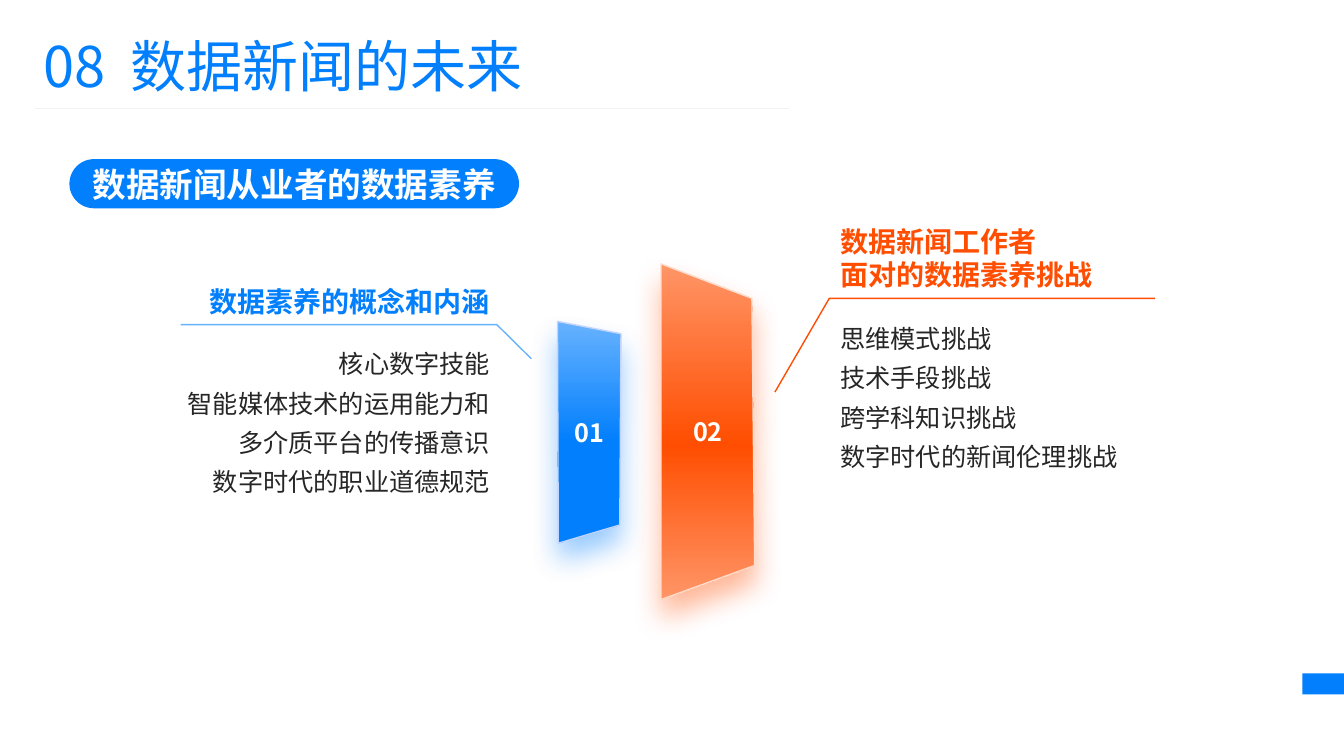
import pptx
import pptx.dml.color
import pptx.enum.shapes
import pptx.enum.text
import pptx.oxml.ns
import pptx.util
from lxml import etree

Cm, Pt = pptx.util.Cm, pptx.util.Pt
ALIGN = pptx.enum.text.PP_ALIGN
ANCHOR = pptx.enum.text.MSO_ANCHOR
SHAPE = pptx.enum.shapes.MSO_SHAPE
qn = pptx.oxml.ns.qn

BLUE, ORANGE, WHITE, INK = "027FFD", "FF4E01", "FFFFFF", "262626"
LIGHT_BLUE, LIGHT_ORANGE = "67B2FE", "FF9567"


def rgb(value):
    return pptx.dml.color.RGBColor.from_string(value)


def sub(parent, tag, **attrs):
    """Append a DrawingML child element."""
    node = etree.SubElement(parent, qn(tag))
    for name, value in attrs.items():
        node.set(name, str(value))
    return node


class Deck:
    font = "Noto Sans CJK SC"

    def __init__(self):
        self.prs = pptx.Presentation()
        self.prs.slide_width, self.prs.slide_height = Cm(33.87), Cm(19.05)
        self.slide = self.prs.slides.add_slide(self.prs.slide_layouts[6])

    def style(self, tf, size, color, bold=False, align=ALIGN.LEFT, spacing=None):
        for p in tf.paragraphs:
            p.alignment = align
            if spacing:
                p.line_spacing = spacing
            for r in p.runs:
                r.font.size, r.font.bold = Pt(size), bold
                r.font.name = self.font
                r.font.color.rgb = rgb(color)
                sub(r.font._element, "a:ea", typeface=self.font)

    def text(self, box, lines, size, color, anchor=ANCHOR.TOP, **style):
        tf = self.slide.shapes.add_textbox(*map(Cm, box)).text_frame
        tf.word_wrap = True
        tf.vertical_anchor = anchor
        tf.margin_left = tf.margin_right = tf.margin_top = tf.margin_bottom = 0
        tf.text = "\n".join(lines)
        self.style(tf, size, color, **style)

    def title(self, box, number, words):
        """Heading whose number is set apart by a widened space."""
        tf = self.slide.shapes.add_textbox(*map(Cm, box)).text_frame
        tf.word_wrap = True
        p = tf.paragraphs[0]
        for part in (number, " ", words):
            p.add_run().text = part
        self.style(tf, 40, BLUE)
        p.runs[1].font._element.set("spc", "900")

    def block(self, kind, box, fill):
        sp = self.slide.shapes.add_shape(kind, *map(Cm, box))
        sp.shadow.inherit = False
        sp.fill.solid()
        sp.fill.fore_color.rgb = rgb(fill)
        sp.line.fill.background()
        return sp

    def pill(self, box, words):
        sp = self.block(SHAPE.ROUNDED_RECTANGLE, box, BLUE)
        sp.adjustments[0] = 0.5
        tf = sp.text_frame
        tf.vertical_anchor = ANCHOR.MIDDLE
        tf.text = words
        self.style(tf, 24, WHITE, bold=True, align=ALIGN.CENTER)

    def outline(self, points, color, closed):
        points = [(Cm(x), Cm(y)) for x, y in points]
        builder = self.slide.shapes.build_freeform(*points[0], scale=1.0)
        builder.add_line_segments(points[1:], close=closed)
        sp = builder.convert_to_shape()
        sp.shadow.inherit = False
        sp.line.color.rgb = rgb(color)
        sp.line.width = Pt(1)
        return sp

    def callout(self, points, color):
        self.outline(points, color, False).fill.background()

    def panel(self, points, label, colors, edge):
        """Numbered panel with a vertical gradient and a glow below it."""
        sp = self.outline(points, edge, True)
        sp.fill.gradient()
        sp.fill.gradient_angle = 270
        stops = sp._element.spPr.find(".//" + qn("a:gsLst"))
        for old in list(stops):
            stops.remove(old)
        for position, color in zip((0, 54, 100), colors):
            sub(sub(stops, "a:gs", pos=position * 1000), "a:srgbClr", val=color)
        glow = sub(sp._element.spPr.find(qn("a:effectLst")), "a:outerShdw",
                   blurRad=Pt(20), dist=Pt(12), dir=5400000, algn="t",
                   rotWithShape=0)
        sub(sub(glow, "a:srgbClr", val=colors[1]), "a:alpha", val=40000)
        tf = sp.text_frame
        tf.word_wrap = False
        tf.vertical_anchor = ANCHOR.MIDDLE
        tf.text = label
        self.style(tf, 18, WHITE, bold=True, align=ALIGN.CENTER)

    def rule(self, x1, x2, y, color):
        line = self.slide.shapes.add_connector(
            pptx.enum.shapes.MSO_CONNECTOR.STRAIGHT, Cm(x1), Cm(y), Cm(x2), Cm(y))
        line.line.color.rgb = rgb(color)
        line.line.width = Pt(0.5)
        sub(line._element.spPr, "a:effectLst")


def main():
    deck = Deck()
    deck.block(SHAPE.RECTANGLE, (32.82, 16.97, 1.05, 0.53), BLUE)
    deck.title((0.84, 0.66, 19.51, 1.96), "08", "数据新闻的未来")
    deck.rule(0.89, 19.89, 2.74, "F2F2F2")
    deck.pill((1.75, 4.01, 11.33, 1.24), "数据新闻从业者的数据素养")

    deck.panel([(14.05, 8.1), (15.65, 8.41), (15.62, 13.23), (14.07, 13.69)],
               "01", (LIGHT_BLUE, BLUE, BLUE), "C3D4FF")
    deck.panel([(16.66, 6.65), (18.95, 7.52), (19.02, 14.25), (16.66, 15.11)],
               "02", (LIGHT_ORANGE, ORANGE, LIGHT_ORANGE), "FFDCCC")

    deck.callout([(4.55, 8.18), (12.52, 8.18), (13.39, 9.04)], LIGHT_BLUE)
    deck.text((3.3, 6.65, 9.04, 1.37), ["数据素养的概念和内涵"], 20, BLUE,
              anchor=ANCHOR.BOTTOM, bold=True, align=ALIGN.RIGHT)
    deck.text((4.55, 8.56, 7.8, 5.31),
              ["核心数字技能", "智能媒体技术的运用能力和多介质平台的传播意识",
               "数字时代的职业道德规范"],
              18, INK, align=ALIGN.RIGHT, spacing=1.3)

    deck.callout([(19.53, 9.88), (20.9, 7.52), (29.11, 7.52)], ORANGE)
    deck.text((21.18, 6.07, 7.37, 1.27), ["数据新闻工作者", "面对的数据素养挑战"],
              20, ORANGE, anchor=ANCHOR.BOTTOM, bold=True)
    deck.text((21.18, 7.92, 7.9, 5.94),
              ["思维模式挑战", "技术手段挑战", "跨学科知识挑战",
               "数字时代的新闻伦理挑战"],
              18, INK, spacing=1.3)
    deck.prs.save("out.pptx")


if __name__ == "__main__":
    main()
